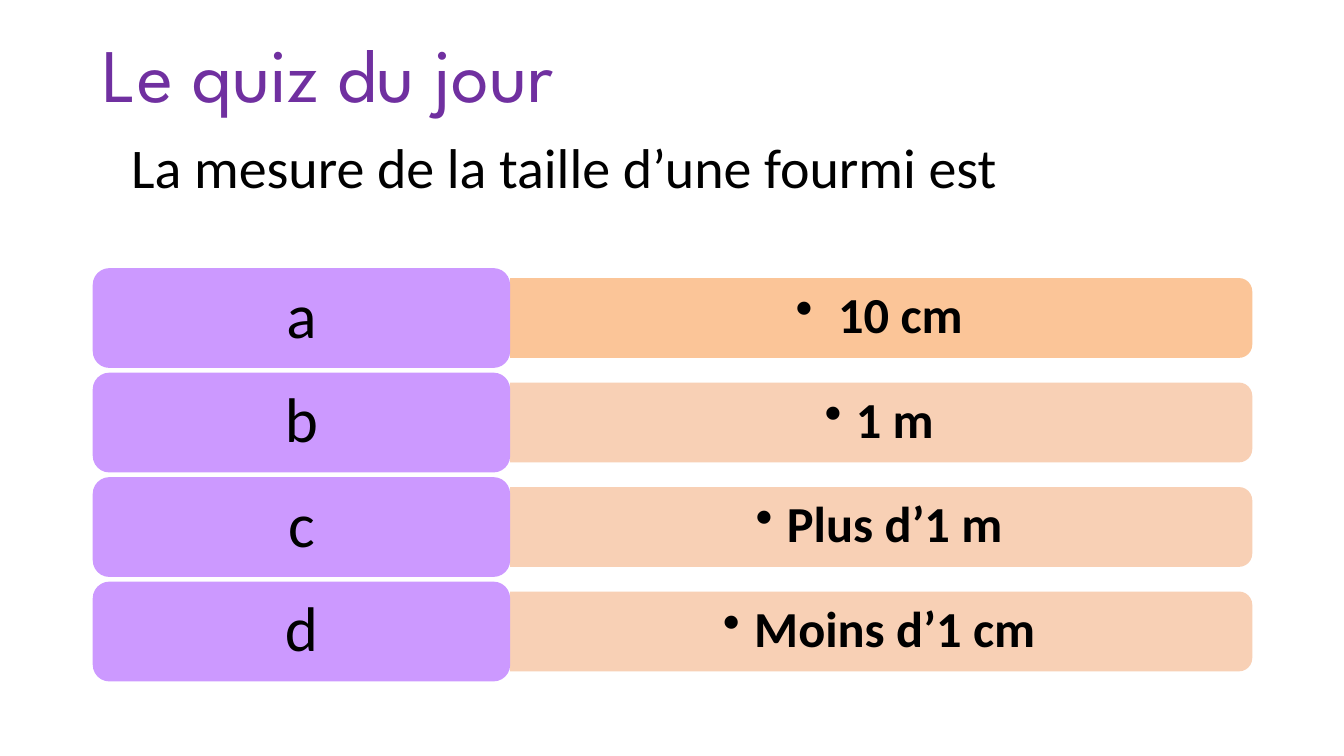
from dataclasses import dataclass

from lxml.etree import SubElement
from pptx import Presentation
from pptx.dml.color import RGBColor
from pptx.enum.shapes import MSO_SHAPE as Preset
from pptx.enum.text import MSO_ANCHOR as Anchor, PP_ALIGN as Align
from pptx.oxml.ns import qn
from pptx.shapes.autoshape import Shape
from pptx.slide import Slide
from pptx.util import Inches, Pt

PURPLE = RGBColor(0x70, 0x30, 0xA0)
LILAC = RGBColor(0xCC, 0x99, 0xFF)
ORANGE = RGBColor(0xFB, 0xBF, 0x8D)
PEACH = RGBColor(0xF8, 0xCB, 0xAD)
BLACK = RGBColor(0, 0, 0)

GRID_LEFT, GRID_TOP, GRID_WIDTH, GRID_HEIGHT = 0.92, 2.66, 11.5, 4.1
LABEL_SHARE, BAR_SHARE = 0.36, 0.8
BOX_HEIGHT = 0.99
LABEL_WIDTH = GRID_WIDTH * LABEL_SHARE
BAR_LEFT = GRID_LEFT + LABEL_WIDTH
BAR_WIDTH = GRID_WIDTH - LABEL_WIDTH
BAR_HEIGHT = BOX_HEIGHT * BAR_SHARE


@dataclass(frozen=True)
class Choice:
    letter: str
    answer: str
    color: RGBColor


@dataclass(frozen=True)
class Box:
    left: float
    top: float
    width: float
    height: float

    def lengths(self) -> list[Inches]:
        return [Inches(value) for value in (self.left, self.top, self.width, self.height)]


CHOICES = [
    Choice("a", " 10 cm", ORANGE),
    Choice("b", "1 m", PEACH),
    Choice("c", "Plus d’1 m", PEACH),
    Choice("d", "Moins d’1 cm", PEACH),
]


def apply(target: object, formats: dict) -> None:
    for name, value in formats.items():
        setattr(target, name, value)


def write(shape: Shape, text: str, size: int, font: str = "Calibri",
          color: RGBColor = BLACK, bold: bool = False, align: Align = Align.CENTER,
          spacing: float = 0.9, insets: tuple[float, float] = (0.1, 0.05),
          anchor: Anchor = Anchor.MIDDLE) -> None:
    frame = shape.text_frame
    side, edge = (Inches(inset) for inset in insets)
    apply(frame, {"word_wrap": True, "vertical_anchor": anchor,
                  "margin_left": side, "margin_right": side,
                  "margin_top": edge, "margin_bottom": edge})
    paragraph = frame.paragraphs[0]
    apply(paragraph, {"alignment": align, "line_spacing": spacing})
    run = paragraph.add_run()
    run.text = text
    apply(run.font, {"name": font, "size": Pt(size), "bold": bold})
    run.font.color.rgb = color


def add_filled(slide: Slide, preset: Preset, box: Box, color: RGBColor) -> Shape:
    shape = slide.shapes.add_shape(preset, *box.lengths())
    shape.shadow.inherit = False
    shape.fill.solid()
    shape.fill.fore_color.rgb = color
    shape.line.fill.background()
    return shape


def add_text(slide: Slide, box: Box, text: str, size: int, **formats) -> Shape:
    shape = slide.shapes.add_textbox(*box.lengths())
    write(shape, text, size, **formats)
    return shape


def add_bullet(shape: Shape) -> None:
    properties = shape.text_frame.paragraphs[0]._p.get_or_add_pPr()
    properties.set("marL", str(Inches(0.31)))
    properties.set("indent", str(Inches(-0.31)))
    SubElement(properties, qn("a:buChar"), char="•")


def add_choice(slide: Slide, choice: Choice, top: float) -> None:
    middle = top + BOX_HEIGHT / 2
    upright = Box(BAR_LEFT + (BAR_WIDTH - BAR_HEIGHT) / 2, middle - BAR_WIDTH / 2,
                  BAR_HEIGHT, BAR_WIDTH)
    bar = add_filled(slide, Preset.ROUND_2_SAME_RECTANGLE, upright, choice.color)
    bar.rotation = 90
    fill_color = bar.fill._xPr.find(qn("a:solidFill"))[0]
    SubElement(fill_color, qn("a:alpha"), val="90000")
    answer = add_text(slide, Box(BAR_LEFT, middle - 0.36, BAR_WIDTH - 0.04, 0.71),
                      choice.answer, 36, bold=True, insets=(0.15, 0.07))
    add_bullet(answer)
    label = add_filled(slide, Preset.ROUNDED_RECTANGLE,
                       Box(GRID_LEFT, top, LABEL_WIDTH, BOX_HEIGHT), LILAC)
    write(label, choice.letter, 45, insets=(0.23, 0.14))


def main() -> None:
    presentation = Presentation()
    apply(presentation, {"slide_width": Inches(13.33), "slide_height": Inches(7.5)})
    slide = presentation.slides.add_slide(presentation.slide_layouts[5])
    title = slide.shapes.title
    apply(title, dict(zip(("left", "top", "width", "height"),
                          Box(GRID_LEFT, 0.27, GRID_WIDTH, 1).lengths())))
    write(title, "Le quiz du jour", 54, font="League Spartan", color=PURPLE, align=Align.LEFT)
    pitch = (GRID_HEIGHT - BOX_HEIGHT) / (len(CHOICES) - 1)
    for row, choice in enumerate(CHOICES):
        add_choice(slide, choice, GRID_TOP + row * pitch)
    add_text(slide, Box(0.46, 1.27, 10.27, 0.77), "La mesure de la taille d’une fourmi est",
             40, spacing=1.0, anchor=Anchor.TOP)
    presentation.save("out.pptx")


if __name__ == "__main__":
    main()
